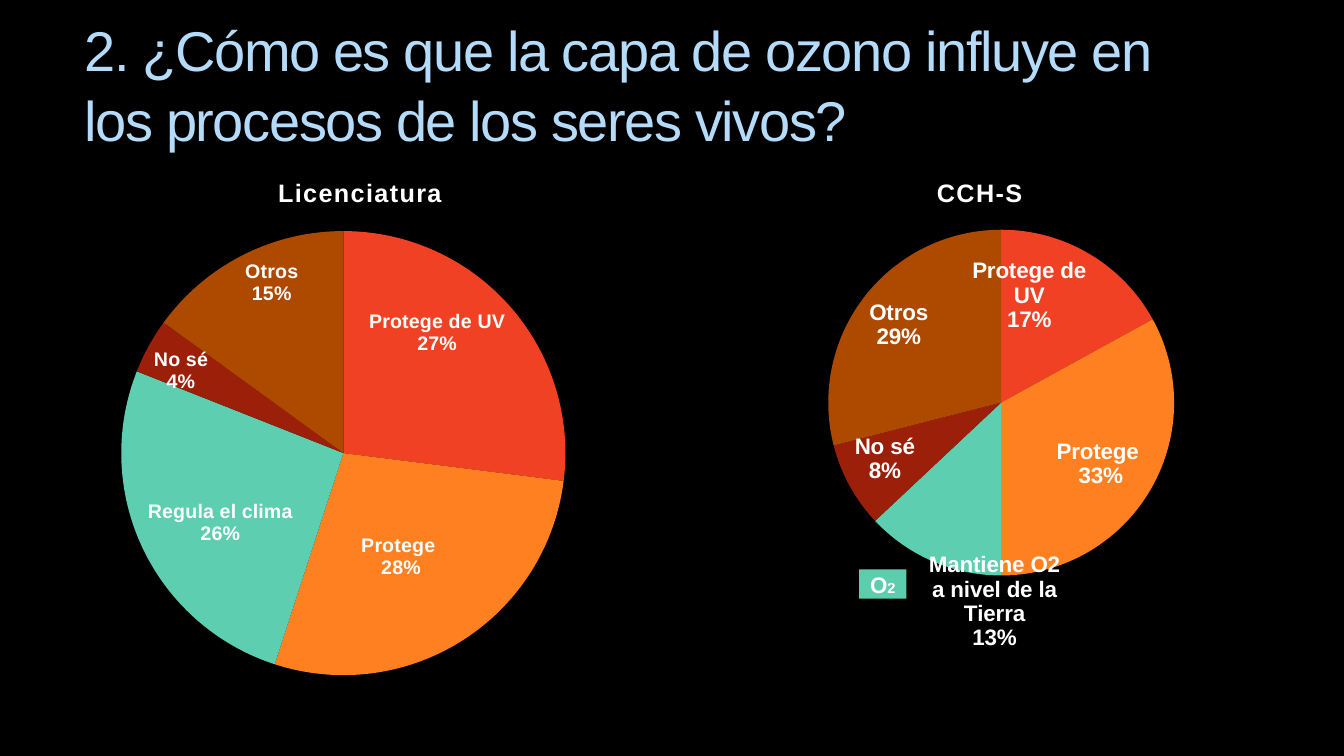
from copy import deepcopy
from dataclasses import dataclass

from lxml import etree as et
from pptx import Presentation, util as u
from pptx.chart.data import CategoryChartData
from pptx.dml.color import RGBColor
from pptx.enum import chart as ch, shapes, text
from pptx.oxml import ns


@dataclass(frozen=True)
class Theme:
    font: str = "Arial"
    back: str = "000000"
    ink: str = "FFFFFF"
    head: str = "B4DCFA"
    tag: str = "5CCDAD"
    pie: tuple = ("F14124", "FF8021", "5DCEAF", "9C1F0A", "AD4A00")
    big: float = 40
    name: float = 18
    base: float = 10
    mark: float = 16
    sub: float = 10.5


@dataclass(frozen=True)
class Box:
    left: float
    top: float
    width: float
    height: float


@dataclass(frozen=True)
class Shift:
    point: int
    right: float
    down: float


@dataclass(frozen=True)
class Pie:
    title: str
    third: str
    values: tuple
    size: float
    box: Box
    plot: Box
    shift: Shift


THEME = Theme()
WIDE, HIGH = u.Inches(13.33), u.Inches(7.5)
PIES = (
    Pie("Licenciatura", "Regula el clima", (27, 28, 26, 4, 15), 14,
        Box(4.35, 20.53, 44.86, 74.93), Box(10.4, 13.4, 73.7, 78.4),
        Shift(1, -3, -10)),
    Pie("CCH-S", "Mantiene O2 a nivel de la Tierra", (17, 33, 13, 8, 29), 16,
        Box(50.79, 20.53, 44.19, 73.07), Box(24.5, 13.5, 58.3, 62.6),
        Shift(2, -1, 17)),
)


def place(box: Box) -> tuple:
    return (int(WIDE * box.left / 100), int(HIGH * box.top / 100),
            int(WIDE * box.width / 100), int(HIGH * box.height / 100))


def style(font, size: float, color: str, bold: bool = False) -> None:
    font.name = THEME.font
    font.size = u.Pt(size)
    font.bold = bold
    font.color.rgb = RGBColor.from_string(color)


def write(para, words: str, size: float, color: str, bold: bool = False,
          gap: int = 0) -> None:
    run = para.add_run()
    run.text = words
    style(run.font, size, color, bold)
    if gap:
        run.font._element.set("spc", str(gap))


def layout(pairs: dict):
    root = et.Element(ns.qn("c:layout"))
    form = et.SubElement(root, ns.qn("c:manualLayout"))
    for key, value in pairs.items():
        et.SubElement(form, ns.qn(f"c:{key}")).set("val", str(value))
    return root


def fit(chart, plot: Box) -> None:
    area = chart._chartSpace.chart.plotArea
    for old in area.findall(ns.qn("c:layout")):
        area.remove(old)
    area.insert(0, layout({
        "layoutTarget": "inner", "xMode": "edge", "yMode": "edge",
        "x": plot.left / 100, "y": plot.top / 100,
        "w": plot.width / 100, "h": plot.height / 100}))


def label(series, size: float, shift: Shift) -> None:
    marks = series.data_labels
    style(marks.font, size, THEME.ink, True)
    marks.show_value = False
    marks.show_category_name = True
    marks.show_percentage = True
    marks.position = ch.XL_LABEL_POSITION.INSIDE_END
    root = marks._element
    lead = root.find(ns.qn("c:showLeaderLines"))
    if lead is not None:
        root.remove(lead)
    et.SubElement(root, ns.qn("c:separator")).text = "\n"
    parts = [deepcopy(part) for part in root]
    one = et.Element(ns.qn("c:dLbl"))
    et.SubElement(one, ns.qn("c:idx")).set("val", str(shift.point))
    one.append(layout({"x": shift.right / 100, "y": shift.down / 100}))
    one.extend(parts)
    root.insert(0, one)


def draw(slide, pie: Pie) -> None:
    data = CategoryChartData()
    data.categories = ("Protege de UV", "Protege ", pie.third, "No sé", "Otros")
    data.add_series("Series 1", pie.values)
    chart = slide.shapes.add_chart(
        ch.XL_CHART_TYPE.PIE, *place(pie.box), data).chart
    style(chart.font, THEME.base, THEME.ink)
    chart.has_legend = False
    chart.has_title = True
    write(chart.chart_title.text_frame.paragraphs[0], pie.title,
          THEME.name, THEME.ink, True, 100)
    chart.chart_title.include_in_layout = False
    fit(chart, pie.plot)
    chart.plots[0].vary_by_categories = True
    series = chart.plots[0].series[0]
    for i, color in enumerate(THEME.pie):
        look = series.points[i].format
        look.fill.solid()
        look.fill.fore_color.rgb = RGBColor.from_string(color)
        look.line.fill.background()
    label(series, pie.size, pie.shift)


def head(slide) -> None:
    frame = slide.shapes.add_textbox(
        *place(Box(5.55, 0.53, 85, 13.33))).text_frame
    frame.word_wrap = True
    frame.vertical_anchor = text.MSO_ANCHOR.TOP
    frame.margin_top = u.Inches(0.09)
    para = frame.paragraphs[0]
    para.line_spacing = 1.04
    write(para, "2. ¿Cómo es que la capa de ozono influye en los procesos "
          "de los seres vivos?", THEME.big, THEME.head, gap=-100)


def badge(slide) -> None:
    shape = slide.shapes.add_shape(
        shapes.MSO_SHAPE.RECTANGLE, *place(Box(63.92, 75.33, 3.53, 3.87)))
    shape.shadow.inherit = False
    shape.fill.solid()
    shape.fill.fore_color.rgb = RGBColor.from_string(THEME.tag)
    shape.line.fill.background()
    frame = shape.text_frame
    frame.vertical_anchor = text.MSO_ANCHOR.MIDDLE
    para = frame.paragraphs[0]
    para.alignment = text.PP_ALIGN.CENTER
    write(para, "O", THEME.mark, THEME.ink, True)
    write(para, "2", THEME.sub, THEME.ink, True)


def main() -> None:
    deck = Presentation()
    deck.slide_width, deck.slide_height = WIDE, HIGH
    slide = deck.slides.add_slide(deck.slide_layouts[6])
    fill = slide.background.fill
    fill.solid()
    fill.fore_color.rgb = RGBColor.from_string(THEME.back)
    head(slide)
    for pie in PIES:
        draw(slide, pie)
    badge(slide)
    deck.save("out.pptx")


if __name__ == "__main__":
    main()
